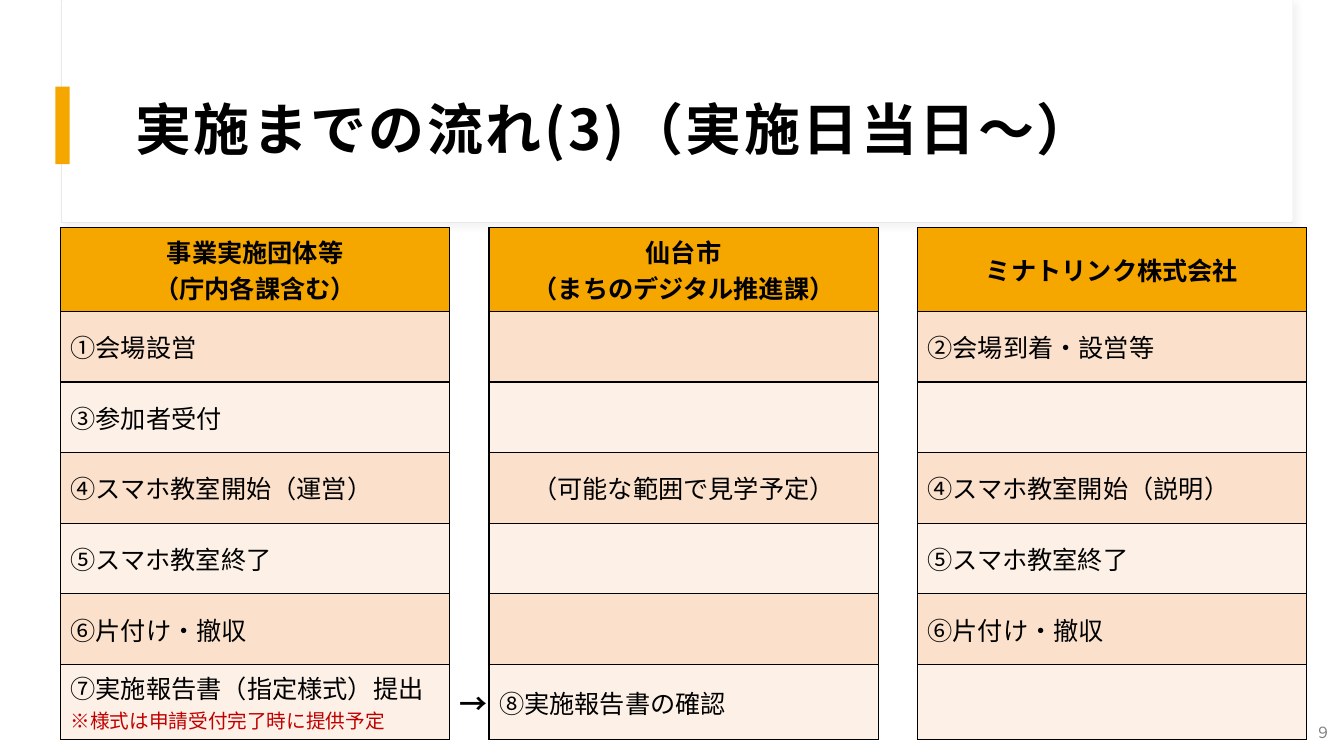
from pptx import Presentation, util as u
from pptx.dml.color import RGBColor
from pptx.enum import shapes, text
from pptx.oxml import parse_xml
from pptx.oxml.ns import nsdecls, qn
from lxml import etree

BLACK, RED, GREY = "000000", "C00000", "808080"
ORANGE, PEACH, CREAM = "F5A700", "FBE1CC", "FDF1E7"
NO_TABLE_STYLE = "{2D5ABB26-0587-4C30-8999-92F81FD0307C}"
COLUMN_WIDTHS = [3.86, 0.39, 3.86, 0.39, 3.86]
ROW_HEIGHTS = [0.83] + [0.7] * 5 + [0.75]
GAP_COLUMNS = (1, 3)

# Each cell is a list of lines; None leaves it empty.
FLOW = [
    [["事業実施団体等", "（庁内各課含む）"], None,
     ["仙台市", "（まちのデジタル推進課）"], None, ["ミナトリンク株式会社"]],
    [["①会場設営"], None, None, None, ["②会場到着・設営等"]],
    [["③参加者受付"], None, None, None, None],
    [["④スマホ教室開始（運営）"], None, ["（可能な範囲で見学予定）"], None,
     ["④スマホ教室開始（説明）"]],
    [["⑤スマホ教室終了"], None, None, None, ["⑤スマホ教室終了"]],
    [["⑥片付け・撤収"], None, None, None, ["⑥片付け・撤収"]],
    [["⑦実施報告書（指定様式）提出", "※様式は申請受付完了時に提供予定"], ["→"],
     ["⑧実施報告書の確認"], None, None],
]


def rgb(value):
    return RGBColor.from_string(value)


class Deck:
    """Holds the font and the current slide."""

    font = "Noto Sans CJK JP"

    def __init__(self, prs):
        self.s = prs.slides.add_slide(prs.slide_layouts[5])

    def run(self, p, words, size, color=BLACK, bold=False):
        r = p.add_run()
        r.text = words
        r.font.size = u.Pt(size)
        r.font.bold = bold
        r.font.color.rgb = rgb(color)
        r.font.name = self.font
        rpr = r.font._element
        etree.SubElement(rpr, qn("a:ea")).set("typeface", self.font)
        return rpr

    def rect(self, box, fill, line=None, shadow=False):
        sp = self.s.shapes.add_shape(shapes.MSO_SHAPE.RECTANGLE, *map(u.Inches, box))
        sp.shadow.inherit = False
        sp.fill.solid()
        sp.fill.fore_color.rgb = rgb(fill)
        if line:
            sp.line.color.rgb = rgb(line)
            sp.line.width = u.Pt(0.75)
        else:
            sp.line.fill.background()
        if shadow:
            sp._element.spPr.find(qn("a:effectLst")).append(parse_xml(
                f'<a:outerShdw {nsdecls("a")} blurRad="50800" dist="38100" dir="2700000">'
                '<a:srgbClr val="D9D9D9"><a:alpha val="30000"/></a:srgbClr></a:outerShdw>'))

    def frame(self, tf, margins):
        tf.word_wrap = True
        tf.auto_size = text.MSO_AUTO_SIZE.NONE
        tf.vertical_anchor = text.MSO_ANCHOR.MIDDLE
        tf.margin_left, tf.margin_top, tf.margin_right, tf.margin_bottom = map(u.Inches, margins)
        return tf.paragraphs[0]

    def title(self, box, words):
        """Fill the title placeholder and bring it in front of the panel."""
        sp = self.s.shapes.title
        sp.left, sp.top, sp.width, sp.height = map(u.Inches, box)
        p = self.frame(sp.text_frame, (0.12, 0.12, 0.12, 0.1))
        p.alignment = text.PP_ALIGN.LEFT
        p.line_spacing = 1.05
        self.run(p, words, 40, bold=True).set("spc", "180")
        self.s.shapes._spTree.append(sp._element)

    def page_number(self, box, words):
        sp = self.s.shapes.add_textbox(*map(u.Inches, box))
        p = self.frame(sp.text_frame, (0, 0, 0, 0))
        p.alignment = text.PP_ALIGN.RIGHT
        self.run(p, words, 11, GREY)

    def borders(self, cell, sides):
        tcpr = cell._tc.get_or_add_tcPr()
        for side in sides:
            tcpr.append(parse_xml(
                f'<a:ln{side} {nsdecls("a")} w="12700"><a:solidFill>'
                f'<a:srgbClr val="{BLACK}"/></a:solidFill></a:ln{side}>'))

    def cell(self, cell, row, col, lines):
        header, gap = row == 0, col in GAP_COLUMNS
        self.borders(cell, "LR" if gap else "LRTB")
        if gap:
            cell.fill.background()
        else:
            cell.fill.solid()
            cell.fill.fore_color.rgb = rgb(ORANGE if header else PEACH if row % 2 else CREAM)
        cell.vertical_anchor = text.MSO_ANCHOR.MIDDLE
        tf = cell.text_frame
        for i, line in enumerate(lines or []):
            p = tf.add_paragraph() if i else tf.paragraphs[0]
            if header or gap or line.startswith("（"):
                p.alignment = text.PP_ALIGN.CENTER
            note = line.startswith("※")
            self.run(p, line, 14 if note else 20 if gap else 18,
                     RED if note else BLACK, header or gap)

    def table(self, left, top, rows):
        size = u.Inches(sum(COLUMN_WIDTHS)), u.Inches(sum(ROW_HEIGHTS))
        table = self.s.shapes.add_table(len(rows), len(COLUMN_WIDTHS), u.Inches(left),
                                        u.Inches(top), *size).table
        table.horz_banding = False
        table._tbl.tblPr.find(qn("a:tableStyleId")).text = NO_TABLE_STYLE
        for column, width in zip(table.columns, COLUMN_WIDTHS):
            column.width = u.Inches(width)
        for i, (height, row) in enumerate(zip(ROW_HEIGHTS, rows)):
            table.rows[i].height = u.Inches(height)
            for j, lines in enumerate(row):
                self.cell(table.cell(i, j), i, j, lines)


def main():
    prs = Presentation()
    prs.slide_width, prs.slide_height = u.Inches(13.33), u.Inches(7.5)
    deck = Deck(prs)
    deck.rect((0.61, 0, 12.21, 2.21), "FFFFFF", "E9E9E9", shadow=True)
    deck.rect((0.62, 0, 12.2, 2.2), "FFFFFF")
    deck.rect((0.55, 0.86, 0.14, 0.77), ORANGE)
    deck.title((1.22, 0.6, 11.12, 1.29), "実施までの流れ(3)（実施日当日～）")
    deck.table(0.6, 2.26, FLOW)
    deck.page_number((11.9, 7.13, 1.3, 0.28), "９")
    prs.save("out.pptx")


if __name__ == "__main__":
    main()
